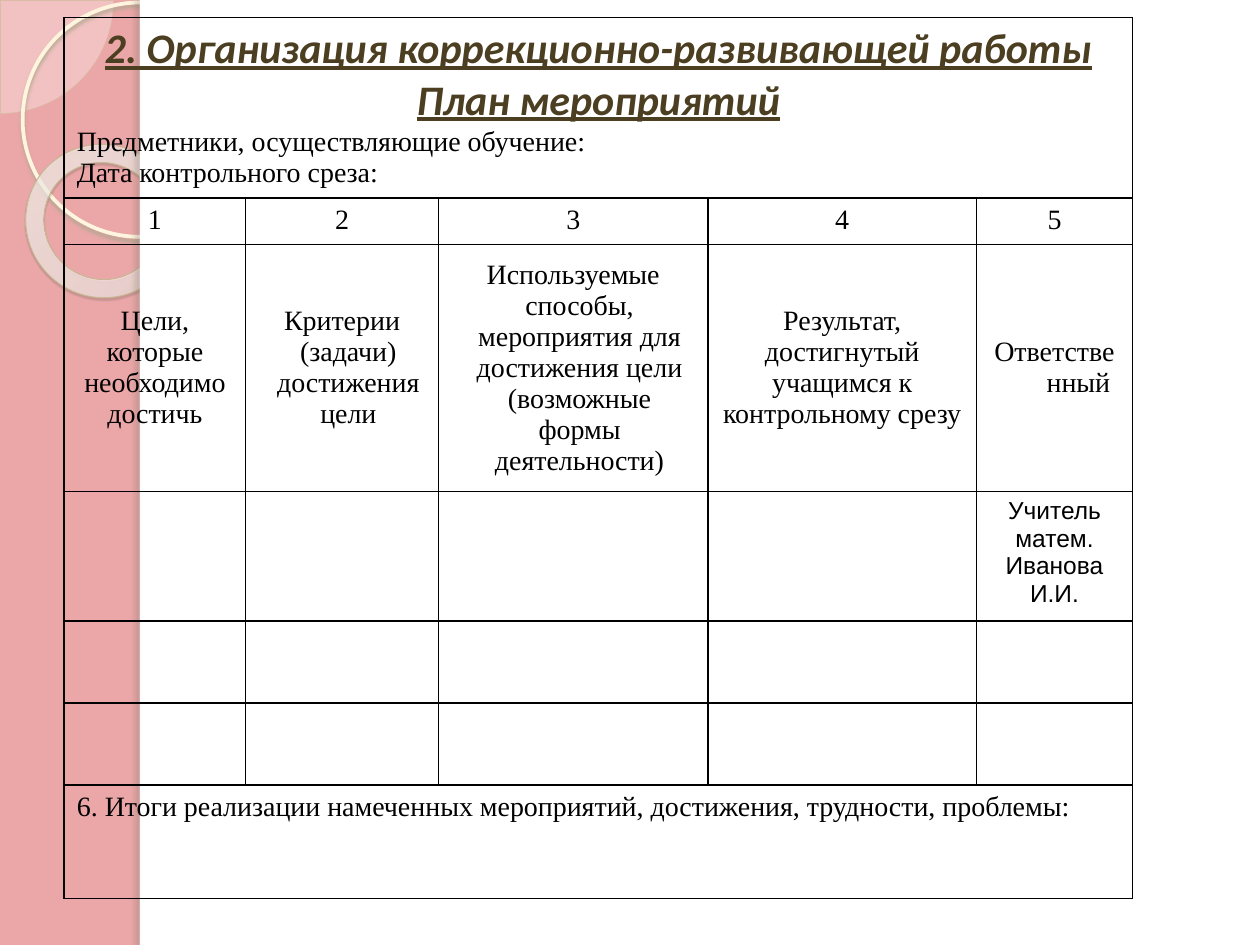
from dataclasses import dataclass
from typing import Optional

from pptx import Presentation
from pptx.dml.color import RGBColor
from pptx.enum.shapes import MSO_SHAPE as Shape
from pptx.enum.text import MSO_ANCHOR as Anchor, PP_ALIGN as Align
from pptx.oxml import parse_xml
from pptx.util import Inches, Pt

COLORS = {
    "rose": "EBA7A8", "white": "FFFFFF", "black": "000000", "brown": "4B3E21",
    "cream": "FEFAF4", "sand": "D3C39F", "ring": "FFF5DE", "donut": "C7B893",
    "ring_shadow": "B0A68F", "donut_shadow": "5A5444", "panel_shadow": "736F63",
}
NS = 'xmlns:a="http://schemas.openxmlformats.org/drawingml/2006/main"'
# Gradient stops: position, colour, opacity (percent)
DONUT_STOPS = [(0, "FFFCF6", 70), (70, "FFFEFB", 55), (100, "F0D28E", 60)]


@dataclass
class Shadow:
    color: str
    opacity: int
    blur: float
    distance: float
    angle: int


@dataclass
class Decor:
    kind: Shape
    box: tuple[float, float, float, float]
    fill: Optional[str] = None
    opacity: int = 100
    line: Optional[str] = None
    line_width: float = 0
    shadow: Optional[Shadow] = None
    rotation: float = 0
    adjustments: tuple[float, ...] = ()


@dataclass
class Line:
    text: str
    align: Align = Align.CENTER
    hanging: float = 0
    size: int = 16
    font: str = "Times New Roman"
    color: str = "black"
    heading: bool = False
    space_before: float = 0


DECOR = [
    Decor(Shape.PIE, (-0.89, -0.89, 1.79, 1.79), "cream", 33, "sand", 0.25,
          adjustments=(0, 54)),
    Decor(Shape.OVAL, (0.18, 0.02, 1.86, 1.86), line="ring", line_width=2.15,
          shadow=Shadow("ring_shadow", 85, 2, 2, 90)),
    Decor(Shape.DONUT, (0.2, 1.15, 1.23, 1.21), line="donut", line_width=0.58,
          shadow=Shadow("donut_shadow", 35, 1, 1.2, 75), rotation=38.6, adjustments=(0.12,)),
    Decor(Shape.RECTANGLE, (1.11, 0, 8.89, 7.5), "white"),
    Decor(Shape.RECTANGLE, (1.11, 0, 0.08, 7.5), "white",
          shadow=Shadow("panel_shadow", 25, 3, 3, 180)),
]

COLUMNS = [1.44, 1.53, 2.14, 2.13, 1.24]
ROWS = [1.43, 0.37, 1.96, 1.03, 0.65, 0.65, 0.9]
HEADER_ROW, MERGED_ROWS = 2, (0, 6)


def title(text: str) -> Line:
    return Line(text, size=24, font="Calibri", color="brown", heading=True)


# Cell text by (row, column)
CELLS = {
    (0, 0): [
        title("2. Организация коррекционно-развивающей работы"),
        title("План мероприятий"),
        Line("Предметники, осуществляющие обучение:", Align.LEFT),
        Line("Дата контрольного среза:", Align.LEFT),
    ],
    **{(1, col): [Line(str(col + 1), hanging=0.38)] for col in range(len(COLUMNS))},
    (2, 0): [Line("Цели, которые необходимо достичь")],
    (2, 1): [Line("Критерии (задачи) достижения цели", hanging=0.1)],
    (2, 2): [Line("Используемые способы, мероприятия для достижения цели "
                  "(возможные формы деятельности)", hanging=0.1)],
    (2, 3): [Line("Результат,"), Line("достигнутый учащимся к контрольному срезу")],
    (2, 4): [Line("Ответственный", hanging=0.38)],
    (3, 4): [Line("Учитель матем. Иванова И.И.", size=14, font="Arial", space_before=2.8)],
    (6, 0): [Line("6. Итоги реализации намеченных мероприятий, достижения, "
                  "трудности, проблемы:", Align.LEFT, hanging=0.38)],
}


def rgb(name: str) -> RGBColor:
    return RGBColor.from_string(COLORS[name])


def color_xml(value: str, opacity: int) -> str:
    return f'<a:srgbClr val="{value}"><a:alpha val="{opacity * 1000}"/></a:srgbClr>'


def set_gradient(shape) -> None:
    stops = "".join(f'<a:gs pos="{position * 1000}">{color_xml(value, opacity)}</a:gs>'
                    for position, value, opacity in DONUT_STOPS)
    gradient = parse_xml(
        f'<a:gradFill {NS}><a:gsLst>{stops}</a:gsLst><a:path path="circle">'
        '<a:fillToRect l="-408000" t="-50000" r="508000" b="150000"/></a:path></a:gradFill>')
    properties = shape.element.spPr
    properties.replace(properties.find("{*}noFill"), gradient)


def draw_decor(slide, decor: Decor) -> None:
    shape = slide.shapes.add_shape(decor.kind, *map(Inches, decor.box))
    shape.rotation = decor.rotation
    for index, value in enumerate(decor.adjustments):
        shape.adjustments[index] = value
    if decor.fill:
        shape.fill.solid()
        shape.fill.fore_color.rgb = rgb(decor.fill)
        solid = shape.element.spPr.find("{*}solidFill")
        solid[0].append(parse_xml(f'<a:alpha {NS} val="{decor.opacity * 1000}"/>'))
    else:
        shape.fill.background()
    if decor.kind == Shape.DONUT:
        set_gradient(shape)
    if decor.line:
        shape.line.color.rgb = rgb(decor.line)
        shape.line.width = Pt(decor.line_width)
    else:
        shape.line.fill.background()
    shape.shadow.inherit = False
    if decor.shadow:
        shadow = decor.shadow
        shape.element.spPr.find("{*}effectLst").append(parse_xml(
            f'<a:outerShdw {NS} blurRad="{Pt(shadow.blur)}" dist="{Pt(shadow.distance)}" '
            f'dir="{shadow.angle * 60000}" algn="ctr" rotWithShape="0">'
            f'{color_xml(COLORS[shadow.color], shadow.opacity)}</a:outerShdw>'))


def set_borders(cell) -> None:
    properties = cell._tc.get_or_add_tcPr()
    for index, side in enumerate("LRTB"):
        properties.insert(index, parse_xml(
            f'<a:ln{side} {NS} w="{Pt(1)}"><a:solidFill>'
            f'{color_xml(COLORS["black"], 100)}</a:solidFill></a:ln{side}>'))


def write_lines(frame, lines: list[Line]) -> None:
    for index, line in enumerate(lines):
        para = frame.add_paragraph() if index else frame.paragraphs[0]
        para.alignment = line.align
        para.space_before = Pt(line.space_before)
        indent = Inches(line.hanging)
        properties = para._p.get_or_add_pPr()
        properties.set("marL", str(indent))
        properties.set("indent", str(-indent))
        span = para.add_run()
        span.text = line.text
        font = span.font
        font.name, font.size = line.font, Pt(line.size)
        font.color.rgb = rgb(line.color)
        font.bold = font.italic = font.underline = line.heading


def draw_table(slide) -> None:
    frame = slide.shapes.add_table(len(ROWS), len(COLUMNS), Inches(0.51), Inches(0.14),
                                   Inches(sum(COLUMNS)), Inches(sum(ROWS)))
    table = frame.table
    table.first_row = table.horz_banding = False
    for column, width in zip(table.columns, COLUMNS):
        column.width = Inches(width)
    for row, height in zip(table.rows, ROWS):
        row.height = Inches(height)
    for row in MERGED_ROWS:
        table.cell(row, 0).merge(table.cell(row, len(COLUMNS) - 1))
    for row in range(len(ROWS)):
        for col in range(len(COLUMNS)):
            cell = table.cell(row, col)
            cell.fill.background()
            set_borders(cell)
            cell.vertical_anchor = Anchor.MIDDLE if row == HEADER_ROW else Anchor.TOP
            write_lines(cell.text_frame, CELLS.get((row, col), []))


def main() -> None:
    deck = Presentation()
    deck.slide_width, deck.slide_height = Inches(10), Inches(7.5)
    slide = deck.slides.add_slide(deck.slide_layouts[6])

    # Background and side ornaments
    slide.background.fill.solid()
    slide.background.fill.fore_color.rgb = rgb("rose")
    for decor in DECOR:
        draw_decor(slide, decor)

    # Plan of activities
    draw_table(slide)
    deck.save("out.pptx")


if __name__ == "__main__":
    main()
